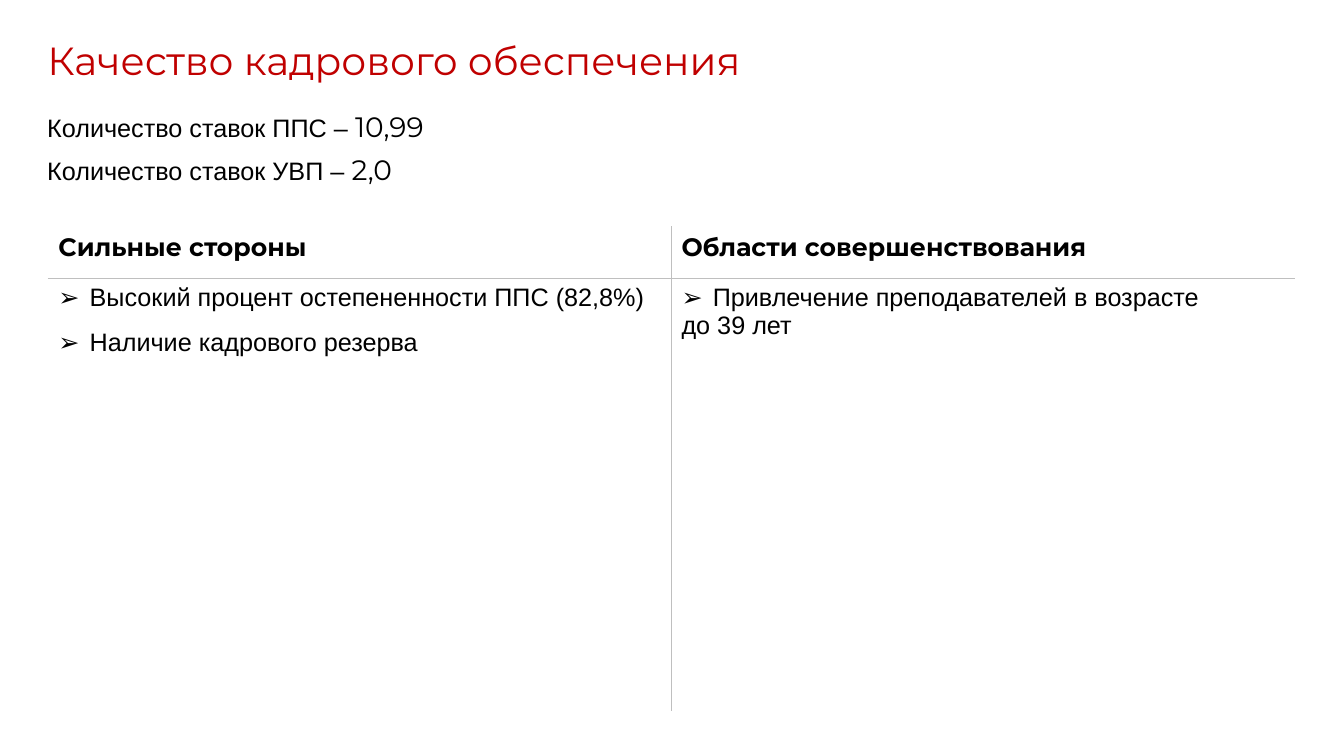
from lxml import etree
from pptx import Presentation
from pptx.dml.color import RGBColor
from pptx.enum.text import MSO_ANCHOR, MSO_AUTO_SIZE, PP_ALIGN
from pptx.oxml.ns import qn
from pptx.util import Inches, Pt

LEFT = PP_ALIGN.LEFT
TOP = MSO_ANCHOR.TOP
NO_FIT = MSO_AUTO_SIZE.NONE
TITLE_ONLY = 5

HEADING_FONT, BODY_FONT = "Montserrat", "Arial"
RED, BLACK, GREY, WHITE = "C00000", "000000", "BFBFBF", "FFFFFF"

TITLE_BOX = (2.78, 4.13, 57.39, 7.6)
COUNTS_BOX = (2.78, 13.87, 31.66, 11.2)
TABLE_BOX = (3.6, 30, 92.72, 64.13)
HEADER_SHARE = 0.106

COUNTS = [("Количество ставок ППС – ", "10,99"), ("Количество ставок УВП – ", "2,0")]
HEADERS = ["Сильные стороны", "Области совершенствования"]
POINTS = [
    [("Высокий процент остепененности ППС (82,8%)", True, 12),
     ("Наличие кадрового резерва", True, 12)],
    [("Привлечение преподавателей в возрасте", True, 0),
     ("до 39 лет", False, 0)],
]


def color(value):
    return RGBColor.from_string(value)


def place(deck, box):
    left, top, width, height = box
    across, down = deck.slide_width / 100, deck.slide_height / 100
    return [round(length) for length in
            (left * across, top * down, width * across, height * down)]


def write(para, text, size=18, font=BODY_FONT, fill=BLACK, bold=False, before=0):
    para.alignment = LEFT
    para.space_before = Pt(before)
    span = para.add_run()
    span.text = text
    span.font.size = Pt(size)
    span.font.name = font
    span.font.bold = bold
    span.font.color.rgb = color(fill)


def add_bullet(para):
    properties = para._p.get_or_add_pPr()
    properties.set("marL", str(Inches(0.31)))
    properties.set("indent", str(-Inches(0.31)))
    etree.SubElement(properties, qn("a:buFont"), typeface=BODY_FONT)
    etree.SubElement(properties, qn("a:buChar"), char="➢")


def add_borders(cell, row, column):
    inner_sides = {"L": column == 1, "R": column == 0, "T": row == 1, "B": row == 0}
    properties = cell._tc.get_or_add_tcPr()
    for side, inner in inner_sides.items():
        line = etree.SubElement(properties, qn(f"a:ln{side}"), w=str(Pt(1)))
        fill = etree.SubElement(line, qn("a:solidFill"))
        etree.SubElement(fill, qn("a:srgbClr"), val=GREY if inner else WHITE)


def add_title(deck, page, box):
    title = page.shapes.title
    title.left, title.top, title.width, title.height = place(deck, box)
    frame = title.text_frame
    frame.auto_size = NO_FIT
    frame.vertical_anchor = TOP
    write(frame.paragraphs[0], "Качество кадрового обеспечения",
          size=28, font=HEADING_FONT, fill=RED)


def add_counts(deck, page, box):
    left, top, width, height = place(deck, box)
    step = height // len(COUNTS)
    for index, (label, value) in enumerate(COUNTS):
        frame = page.shapes.add_textbox(left, top + index * step, width, step).text_frame
        frame.word_wrap = True
        para = frame.paragraphs[0]
        write(para, label)
        write(para, value, size=20, font=HEADING_FONT)


def add_comparison(deck, page, box):
    left, top, width, height = place(deck, box)
    table = page.shapes.add_table(2, len(HEADERS), left, top, width, height).table
    table.first_row = table.horz_banding = False
    table.rows[0].height = round(height * HEADER_SHARE)
    table.rows[1].height = height - table.rows[0].height
    for column, (header, points) in enumerate(zip(HEADERS, POINTS)):
        for row in range(2):
            cell = table.cell(row, column)
            add_borders(cell, row, column)
            cell.fill.background()
        write(table.cell(0, column).text_frame.paragraphs[0], header,
              font=HEADING_FONT, bold=True)
        frame = table.cell(1, column).text_frame
        for index, (text, bulleted, before) in enumerate(points):
            para = frame.add_paragraph() if index else frame.paragraphs[0]
            write(para, text, before=before)
            if bulleted:
                add_bullet(para)


def main():
    deck = Presentation()
    deck.slide_width, deck.slide_height = Inches(13.33), Inches(7.5)
    page = deck.slides.add_slide(deck.slide_layouts[TITLE_ONLY])
    add_title(deck, page, TITLE_BOX)
    add_counts(deck, page, COUNTS_BOX)
    add_comparison(deck, page, TABLE_BOX)
    deck.save("out.pptx")


if __name__ == "__main__":
    main()
